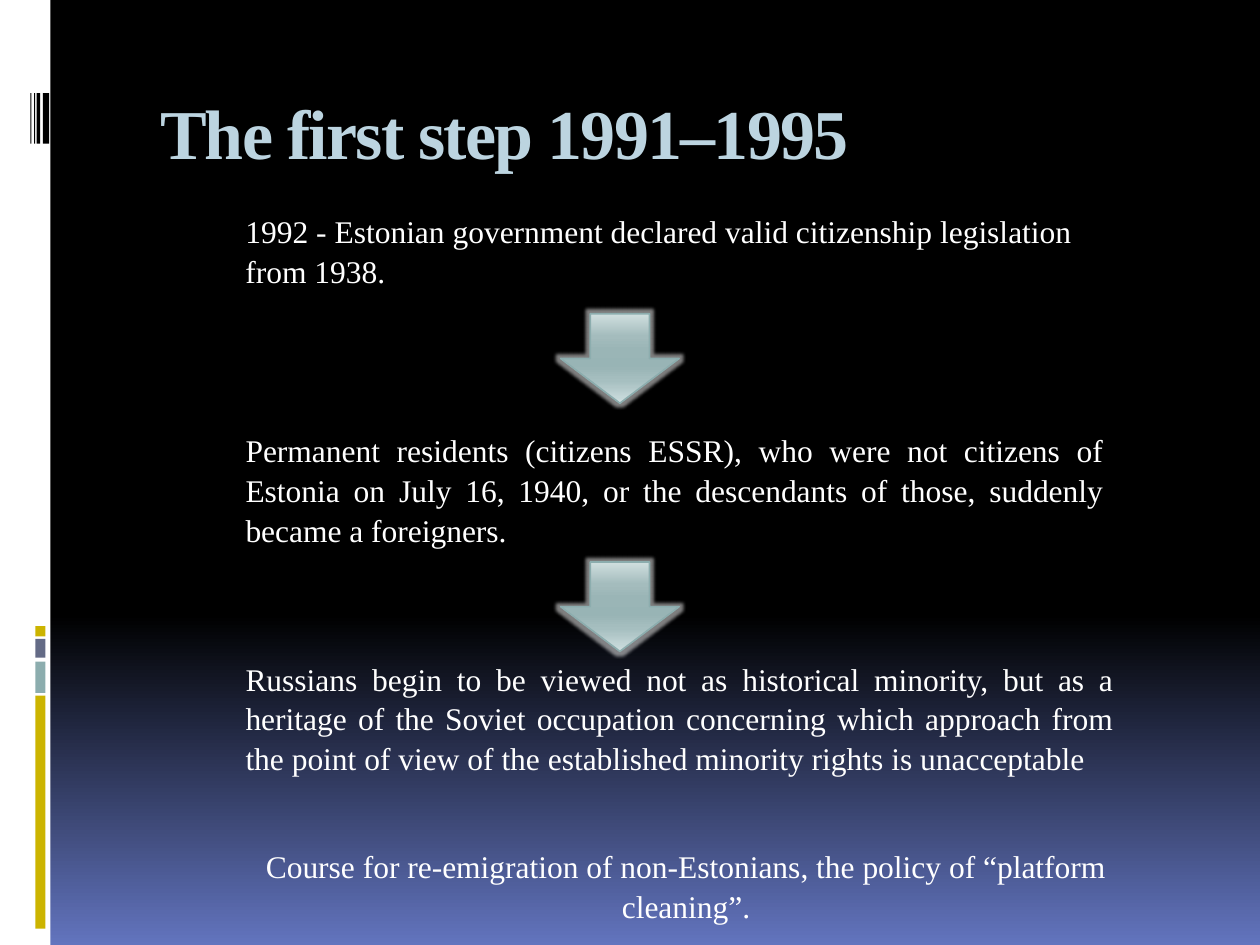
"""Build the slide on the first step of 1991–1995."""
from dataclasses import dataclass

from lxml import etree
from pptx import Presentation
from pptx import util as u
from pptx.dml.color import RGBColor
from pptx.enum import shapes, text
from pptx.oxml import ns

FONT = "Times New Roman"
WHITE = RGBColor(0xFF, 0xFF, 0xFF)
BLACK = RGBColor(0x00, 0x00, 0x00)
GOLD = RGBColor(0xCC, 0xB4, 0x00)
TEAL = RGBColor(0x8C, 0xAD, 0xAE)
SLATE = RGBColor(0x64, 0x6B, 0x86)
PALE_BLUE = RGBColor(0xBC, 0xD4, 0xE0)
INDIGO = RGBColor(0x62, 0x74, 0xBE)

BACKGROUND_STOPS = [(0, BLACK), (65, BLACK), (100, INDIGO)]
ARROW_STOPS = [
    (0, RGBColor(0xD0, 0xDF, 0xDF)),
    (25, RGBColor(0xA4, 0xBC, 0xBD)),
    (40, RGBColor(0x9A, 0xB5, 0xB6)),
    (50, RGBColor(0x98, 0xB4, 0xB5)),
    (60, RGBColor(0x9A, 0xB5, 0xB6)),
    (75, RGBColor(0xA6, 0xBF, 0xC0)),
    (100, RGBColor(0xCF, 0xDF, 0xE0)),
]


@dataclass
class Box:
    left: float
    top: float
    width: float
    height: float

    def lengths(self) -> list:
        return [u.Inches(v) for v in (self.left, self.top, self.width, self.height)]


@dataclass
class Bar:
    box: Box
    color: RGBColor


@dataclass
class Statement:
    box: Box
    words: str
    align: text.PP_ALIGN


SIDE_BARS = [
    Bar(Box(0, 0, 0.4, 7.5), WHITE),
    Bar(Box(0.28, 5.52, 0.08, 1.85), GOLD),
    Bar(Box(0.28, 5.25, 0.08, 0.25), TEAL),
    Bar(Box(0.28, 5.07, 0.08, 0.15), SLATE),
    Bar(Box(0.28, 4.97, 0.08, 0.08), GOLD),
] + [
    Bar(Box(left, 0.74, width, 0.4), BLACK)
    for left, width in [(0.34, 0.05), (0.29, 0.03), (0.27, 0.01), (0.24, 0.01)]
]

STATEMENTS = [
    Statement(
        Box(1.85, 1.62, 7.16, 0.71),
        "1992 - Estonian government declared valid citizenship legislation from 1938.",
        text.PP_ALIGN.LEFT,
    ),
    Statement(
        Box(1.85, 3.36, 7.01, 1.01),
        "Permanent residents (citizens ESSR), who were not citizens of Estonia on "
        "July 16, 1940, or the descendants of those, suddenly became a foreigners.",
        text.PP_ALIGN.JUSTIFY,
    ),
    Statement(
        Box(1.85, 5.17, 7.09, 1.01),
        "Russians begin to be viewed not as historical minority, but as a heritage of "
        "the Soviet occupation concerning which approach from the point of view of "
        "the established minority rights is unacceptable",
        text.PP_ALIGN.JUSTIFY,
    ),
    Statement(
        Box(1.95, 6.66, 6.99, 0.71),
        "Course for re-emigration of non-Estonians, the policy of “platform cleaning”.",
        text.PP_ALIGN.CENTER,
    ),
]

ARROWS = [Box(4.45, top, 0.94, 0.71) for top in (2.49, 4.46)]


def add_color(parent, color: RGBColor):
    return etree.SubElement(parent, ns.qn("a:srgbClr"), val=str(color))


def fill_gradient(fill, holder, stops: list) -> None:
    fill.gradient()
    fill.gradient_angle = 270
    stop_list = next(holder.iter(ns.qn("a:gsLst")))
    for old in list(stop_list):
        stop_list.remove(old)
    for percent, color in stops:
        stop = etree.SubElement(stop_list, ns.qn("a:gs"), pos=str(percent * 1000))
        add_color(stop, color)


def add_bar(s, bar: Bar) -> None:
    sp = s.shapes.add_shape(shapes.MSO_SHAPE.RECTANGLE, *bar.box.lengths())
    sp.shadow.inherit = False
    sp.fill.solid()
    sp.fill.fore_color.rgb = bar.color
    sp.line.fill.background()


def add_arrow(s, box: Box) -> None:
    sp = s.shapes.add_shape(shapes.MSO_SHAPE.DOWN_ARROW, *box.lengths())
    sp.shadow.inherit = False
    fill_gradient(sp.fill, sp.element, ARROW_STOPS)
    sp.line.color.rgb = TEAL
    sp.line.width = u.Pt(0.94)
    effects = next(sp.element.iter(ns.qn("a:effectLst")))
    glow = etree.SubElement(effects, ns.qn("a:glow"), rad=str(u.Pt(4)))
    etree.SubElement(add_color(glow, WHITE), ns.qn("a:alpha"), val="50000")


def add_statement(s, item: Statement) -> None:
    tf = s.shapes.add_textbox(*item.box.lengths()).text_frame
    tf.word_wrap = True
    tf.text = item.words
    p = tf.paragraphs[0]
    p.alignment = item.align
    p.line_spacing = 1.05
    r = p.runs[0]
    r.font.name = FONT
    r.font.size = u.Pt(18)
    r.font.color.rgb = WHITE


def set_title(s, box: Box, words: str) -> None:
    sp = s.shapes.title
    sp.left, sp.top, sp.width, sp.height = box.lengths()
    tf = sp.text_frame
    tf.text = words
    tf.vertical_anchor = text.MSO_ANCHOR.TOP
    tf.margin_top = u.Inches(0.11)
    p = tf.paragraphs[0]
    p.alignment = text.PP_ALIGN.LEFT
    r = p.runs[0]
    r.font.name = FONT
    r.font.size = u.Pt(40)
    r.font.bold = True
    r.font.color.rgb = PALE_BLUE
    r.font._element.set("spc", "-100")


def main() -> None:
    prs = Presentation()
    prs.slide_width, prs.slide_height = u.Inches(10), u.Inches(7.5)
    s = prs.slides.add_slide(prs.slide_layouts[5])
    fill_gradient(s.background.fill, s.element, BACKGROUND_STOPS)
    set_title(s, Box(1.17, 0.6, 8.5, 1), "The first step 1991–1995")
    for bar in SIDE_BARS:
        add_bar(s, bar)
    for box in ARROWS:
        add_arrow(s, box)
    for item in STATEMENTS:
        add_statement(s, item)
    prs.save("out.pptx")


if __name__ == "__main__":
    main()
